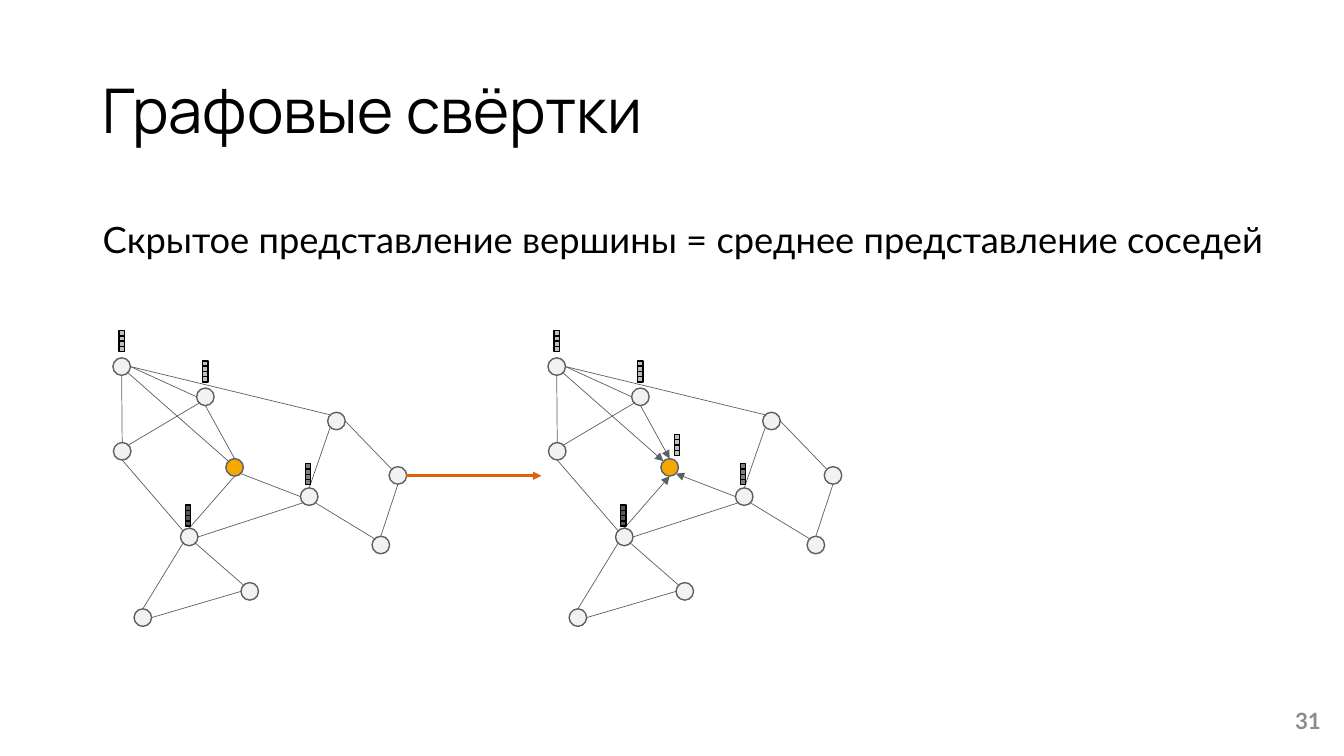
"""Build the slide that shows a graph convolution as an average over neighbours."""
from math import cos, pi, sin

from lxml.etree import SubElement
from pptx import Presentation
from pptx.dml.color import RGBColor
from pptx.enum.shapes import MSO_CONNECTOR as Connector, MSO_SHAPE as Shape
from pptx.enum.text import MSO_ANCHOR as Anchor, PP_ALIGN as Align
from pptx.oxml.ns import qn
from pptx.util import Inches, Pt

BLACK = RGBColor(0x00, 0x00, 0x00)
NUMBER_GRAY = RGBColor(0x8C, 0x8C, 0x8C)
OUTLINE = RGBColor(0x5A, 0x61, 0x66)
NODE_FILL = RGBColor(0xF2, 0xF2, 0xF2)
TARGET_FILL = RGBColor(0xF6, 0xA8, 0x00)
STEP_ORANGE = RGBColor(0xDD, 0x64, 0x0C)
LIGHT = RGBColor(0xBF, 0xBF, 0xBF)
MIDDLE = RGBColor(0x80, 0x80, 0x80)
DARK = RGBColor(0x59, 0x59, 0x59)

GRID = Inches(0.01)
NODE_SIZE = 17.4
CELL = 5.25
CELLS = 4
GRAPH_STEP = 431.5

presentation = Presentation()
presentation.slide_width = Inches(13.33)
presentation.slide_height = Inches(7.5)
slide = presentation.slides.add_slide(presentation.slide_layouts[6])


def add_line(start, end, color, width, arrow=False):
    points = [round(value * GRID) for value in (*start, *end)]
    connector = slide.shapes.add_connector(Connector.STRAIGHT, *points)
    connector.line.color.rgb = color
    connector.line.width = Pt(width)
    if arrow:
        SubElement(connector.line._get_or_add_ln(), qn("a:tailEnd"), type="triangle")
    SubElement(connector._element.spPr, qn("a:effectLst"))


def add_block(shapes, kind, left, top, size, fill, outline):
    box = [round(value * GRID) for value in (left, top, size, size)]
    shape = shapes.add_shape(kind, *box)
    shape.shadow.inherit = False
    shape.fill.solid()
    shape.fill.fore_color.rgb = fill
    shape.line.color.rgb = outline
    shape.line.width = Pt(1)


texts = [
    ("Графовые свёртки", (92, 40, 1150, 145), Anchor.MIDDLE, Align.LEFT,
     "Manrope", 44, BLACK, False, 0.9, 0),
    ("31", (1020, 695, 300, 40), Anchor.MIDDLE, Align.RIGHT,
     "Lato", 16, NUMBER_GRAY, True, 1, 0),
    ("Скрытое представление вершины = среднее представление соседей",
     (92, 215, 1215, 69), Anchor.TOP, Align.LEFT,
     "Lato", 25.9, BLACK, False, 0.9, 10),
]
for text, box, anchor, align, font, size, color, bold, spacing, before in texts:
    frame = slide.shapes.add_textbox(*(value * GRID for value in box)).text_frame
    frame.word_wrap = True
    frame.vertical_anchor = anchor
    frame.text = text
    paragraph = frame.paragraphs[0]
    paragraph.alignment = align
    paragraph.line_spacing = spacing
    paragraph.space_before = Pt(before)
    run_font = paragraph.runs[0].font
    run_font.name = font
    run_font.size = Pt(size)
    run_font.bold = bold
    run_font.color.rgb = color

nodes = {
    "A": (112, 355), "B": (112.5, 439), "C": (195, 385), "target": (224, 455),
    "E": (179, 524), "F": (133, 604), "G": (239, 578), "H": (298, 484),
    "I": (325, 409), "J": (369, 532), "K": (386, 463),
}
# Each end is a node and one of its eight sites, counted leftwards from the top.
edges = [
    ("B", 4, "E", 1), ("A", 6, "C", 2), ("A", 4, "B", 0), ("C", 3, "B", 7),
    ("F", 0, "E", 3), ("F", 6, "G", 2), ("E", 5, "G", 1), ("J", 0, "K", 4),
    ("J", 1, "H", 5), ("I", 6, "K", 1), ("E", 6, "H", 3), ("I", 3, "H", 0),
    ("A", 6, "I", 1),
]
neighbour_edges = [
    ("E", 0, "target", 4), ("C", 4, "target", 0),
    ("A", 5, "target", 1), ("H", 2, "target", 5),
]
vectors = [(118, 328, LIGHT), (201, 358, LIGHT), (184, 501, DARK), (303, 460, MIDDLE)]
averaged_vector = (237.5, 431, LIGHT)

for shift, averaged in ((0, False), (GRAPH_STEP, True)):
    for name, (left, top) in nodes.items():
        fill = TARGET_FILL if name == "target" else NODE_FILL
        add_block(slide.shapes, Shape.OVAL, left + shift, top, NODE_SIZE, fill, OUTLINE)

    for edge in edges + neighbour_edges:
        ends = []
        for name, site in (edge[:2], edge[2:]):
            left, top = nodes[name]
            angle = site * pi / 4
            ends.append((left + shift + NODE_SIZE / 2 * (1 - sin(angle)),
                         top + NODE_SIZE / 2 * (1 - cos(angle))))
        add_line(*ends, OUTLINE, 0.5, arrow=averaged and edge in neighbour_edges)

    for left, top, fill in vectors + [averaged_vector] * averaged:
        group = slide.shapes.add_group_shape()
        for row in range(CELLS):
            add_block(group.shapes, Shape.RECTANGLE, left + shift, top + row * CELL,
                      CELL, fill, BLACK)

add_line((403, 472), (537, 472), STEP_ORANGE, 2, arrow=True)

presentation.save("out.pptx")
